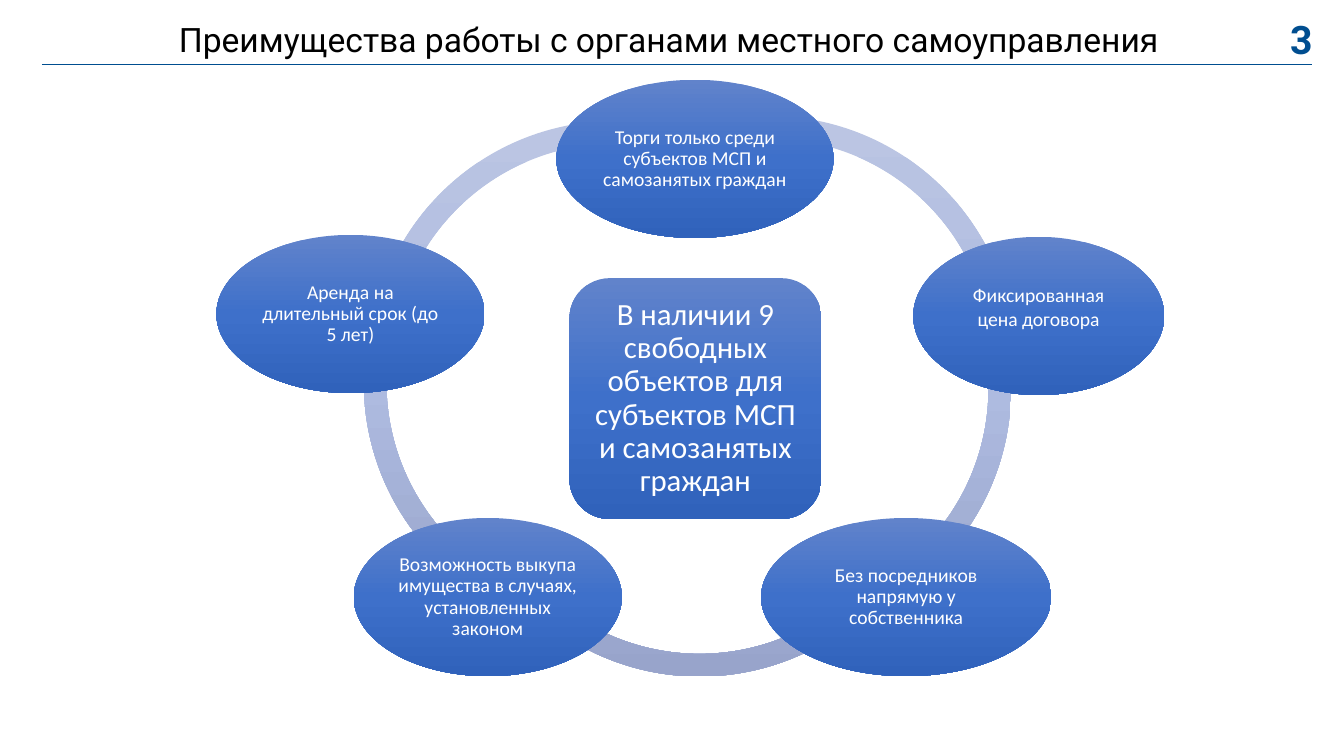
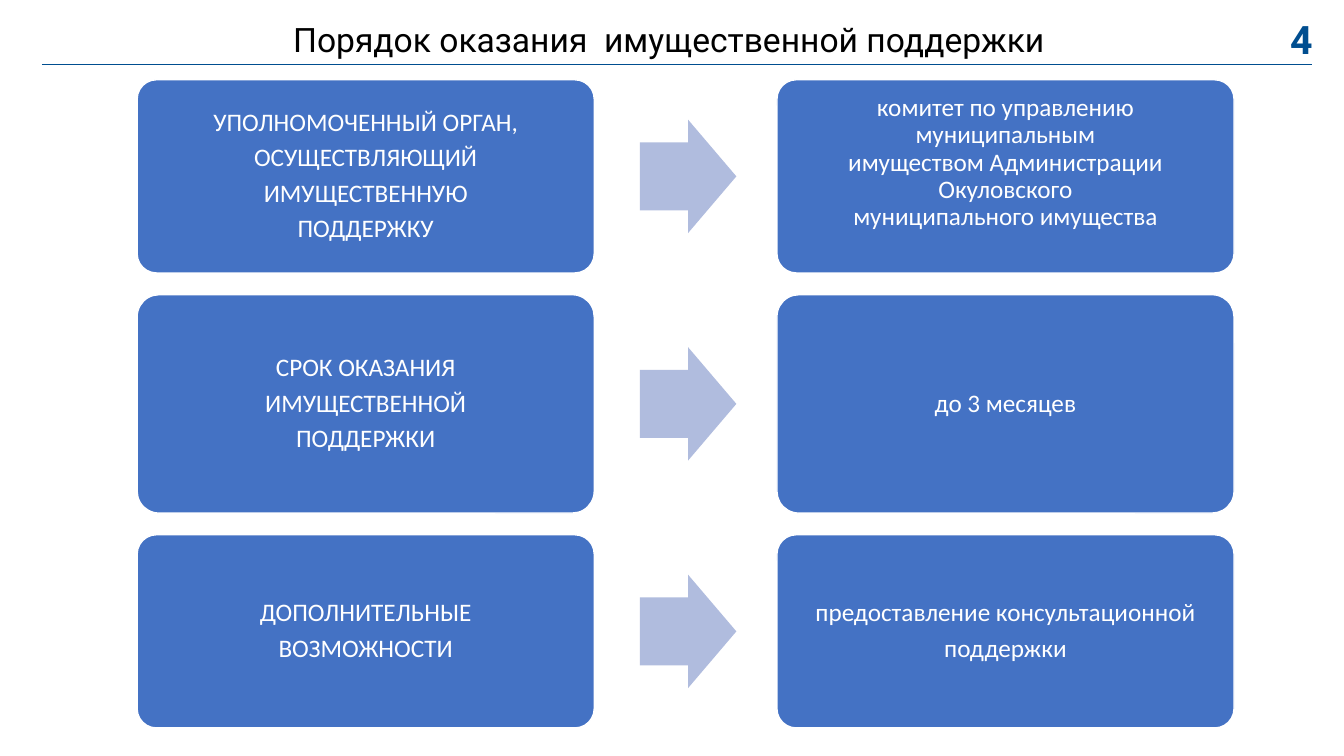
"""Builds two slides on property support for small businesses."""
import copy

import pptx
import pptx.dml.color
import pptx.enum.shapes
import pptx.enum.text
import pptx.oxml.ns
import pptx.util

Pt = pptx.util.Pt
SHAPES = pptx.enum.shapes.MSO_SHAPE
ALIGN = pptx.enum.text.PP_ALIGN
MIDDLE = pptx.enum.text.MSO_ANCHOR.MIDDLE

COLORS = {
    "title": "000000",
    "accent": "004E90",
    "white": "FFFFFF",
    "box": "4472C4",
    "arrow": "B0BCDE",
}
NODE_GRADIENT = ("6183CB", "3E70CA", "3062BB")
RING_GRADIENT = ("BBC5E3", "AEBBE0", "98A4CB")


def rgb(value):
    return pptx.dml.color.RGBColor.from_string(value)


class Deck:
    def __init__(self):
        self.presentation = pptx.Presentation()
        self.presentation.slide_width = Pt(960)
        self.presentation.slide_height = Pt(540)
        self.slide = None

    def add_slide(self, title, number):
        layout = self.presentation.slide_layouts[6]
        self.slide = self.presentation.slides.add_slide(layout)
        self.label(title, 22.5, 903.5, 24, "title", ALIGN.CENTER)
        self.label(number, 914.5, 30, 28, "accent", ALIGN.LEFT, bold=True)
        self.rule(30, 937.5, 46)

    def label(self, text, left, width, size, color, align, bold=False):
        box = self.slide.shapes.add_textbox(Pt(left), Pt(21), Pt(width), Pt(18))
        self.set_text(box, [text], size, color, "Roboto", align, bold, (7.2, 3.6, 0, 3.6))

    def rule(self, start, end, top):
        line = self.slide.shapes.add_connector(
            pptx.enum.shapes.MSO_CONNECTOR.STRAIGHT, Pt(start), Pt(top), Pt(end), Pt(top))
        line.line.color.rgb = rgb(COLORS["accent"])
        line.line.width = Pt(1)
        properties = line._element.spPr
        properties.append(properties.makeelement(pptx.oxml.ns.qn("a:effectLst"), {}))

    def set_text(self, shape, lines, size, color="white", font="Calibri", align=ALIGN.CENTER,
                 bold=False, insets=(0, 0, 0, 0), spacing=0.9, after=0):
        frame = shape.text_frame
        frame.word_wrap = True
        frame.vertical_anchor = MIDDLE
        (frame.margin_left, frame.margin_top,
         frame.margin_right, frame.margin_bottom) = (Pt(inset) for inset in insets)
        for index, line in enumerate(lines):
            paragraph = frame.add_paragraph() if index else frame.paragraphs[0]
            paragraph.alignment = align
            paragraph.line_spacing = spacing
            paragraph.space_after = Pt(after)
            run = paragraph.add_run()
            run.text = line
            run.font.name = font
            run.font.size = Pt(size)
            run.font.bold = bold
            run.font.color.rgb = rgb(COLORS[color])

    def shape(self, kind, left, top, width, height, adjustments=()):
        shape = self.slide.shapes.add_shape(kind, Pt(left), Pt(top), Pt(width), Pt(height))
        shape.shadow.inherit = False
        shape.line.fill.background()
        for index, value in enumerate(adjustments):
            shape.adjustments[index] = value
        return shape

    def shade(self, shape, colors):
        shape.fill.gradient()
        shape.fill.gradient_angle = 270
        stops = shape._element.spPr.find(".//" + pptx.oxml.ns.qn("a:gsLst"))
        stops.append(copy.deepcopy(stops[0]))
        for stop, color, position in zip(shape.fill.gradient_stops, colors, (0, 0.5, 1)):
            stop.color.rgb = rgb(color)
            stop.position = position

    def ring_arc(self, left, top, start, end):
        degree = 0.6
        arc = self.shape(SHAPES.BLOCK_ARC, left, top, 351.4, 351.4,
                         (start * degree, end * degree, 0.046))
        self.shade(arc, RING_GRADIENT)

    def node(self, kind, left, top, width, height, text, size, inset, lift=0, spacing=0.9):
        node = self.shape(kind, left, top, width, height)
        self.shade(node, NODE_GRADIENT)
        self.set_text(node, [text], size, insets=(inset, inset, inset, inset + lift),
                      spacing=spacing)

    def box(self, left, top, height, lines, lift=0, after=6):
        box = self.shape(SHAPES.ROUNDED_RECTANGLE, left, top, 326.5, height, (0.1,))
        box.fill.solid()
        box.fill.fore_color.rgb = rgb(COLORS["box"])
        box.line.color.rgb = rgb(COLORS["white"])
        box.line.width = Pt(1)
        self.set_text(box, lines, 18, insets=(5, 5, 5, 5 + lift), after=after)

    def arrow(self, middle):
        arrow = self.shape(SHAPES.RIGHT_ARROW, 457, middle - 40.5, 69, 81, (0.6, 0.5))
        arrow.fill.solid()
        arrow.fill.fore_color.rgb = rgb(COLORS["arrow"])


def add_advantages(deck):
    deck.add_slide("Преимущества работы с органами местного самоуправления", "3")
    for arc in (
        (263.5, 86.4, 193.8, 297.7),
        (259.9, 97.9, 113.1, 195.1),
        (324, 131.8, 29.3, 150.7),
        (370.8, 102.2, 344.9, 65.5),
        (373.7, 82.8, 242.7, 346.6),
    ):
        deck.ring_arc(*arc)
    deck.node(SHAPES.ROUNDED_RECTANGLE, 406.8, 198.7, 180, 172,
              "В наличии 9 свободных объектов для субъектов МСП и самозанятых граждан", 22, 2)
    for left, top, width, text, lift, spacing in (
        (397.4, 57, 198, "Торги только среди субъектов МСП и самозанятых граждан", 0, 0.9),
        (652.3, 169.2, 179.3, "Фиксированная цена договора", 13, 1),
        (543.6, 370, 207.4, "Без посредников напрямую у собственника", 0, 0.9),
        (252.7, 370, 191.5,
         "Возможность выкупа имущества в случаях, установленных законом", 0, 0.9),
        (154.6, 167.8, 191.5, "Аренда на длительный срок (до 5 лет)", 0, 0.9),
    ):
        deck.node(SHAPES.OVAL, left, top, width, 113, text, 14, 1.4, lift, spacing)


def add_procedure(deck):
    deck.add_slide("Порядок оказания  имущественной поддержки", "4")
    top = 57
    for height, subject, answer, lift, after in (
        (138, ["УПОЛНОМОЧЕННЫЙ ОРГАН,", "ОСУЩЕСТВЛЯЮЩИЙ", "ИМУЩЕСТВЕННУЮ", "ПОДДЕРЖКУ"],
         ["комитет по управлению муниципальным", "имуществом Администрации Окуловского",
          "муниципального имущества"], 19, 0),
        (156, ["СРОК ОКАЗАНИЯ", "ИМУЩЕСТВЕННОЙ", "ПОДДЕРЖКИ"], ["до 3 месяцев"], 0, 6),
        (138, ["ДОПОЛНИТЕЛЬНЫЕ", "ВОЗМОЖНОСТИ"],
         ["предоставление консультационной", "поддержки"], 0, 6),
    ):
        deck.box(98, top, height, subject)
        deck.arrow(top + height / 2)
        deck.box(555, top, height, answer, lift, after)
        top += height + 15.5


def main():
    deck = Deck()
    add_advantages(deck)
    add_procedure(deck)
    deck.presentation.save("out.pptx")


if __name__ == "__main__":
    main()
